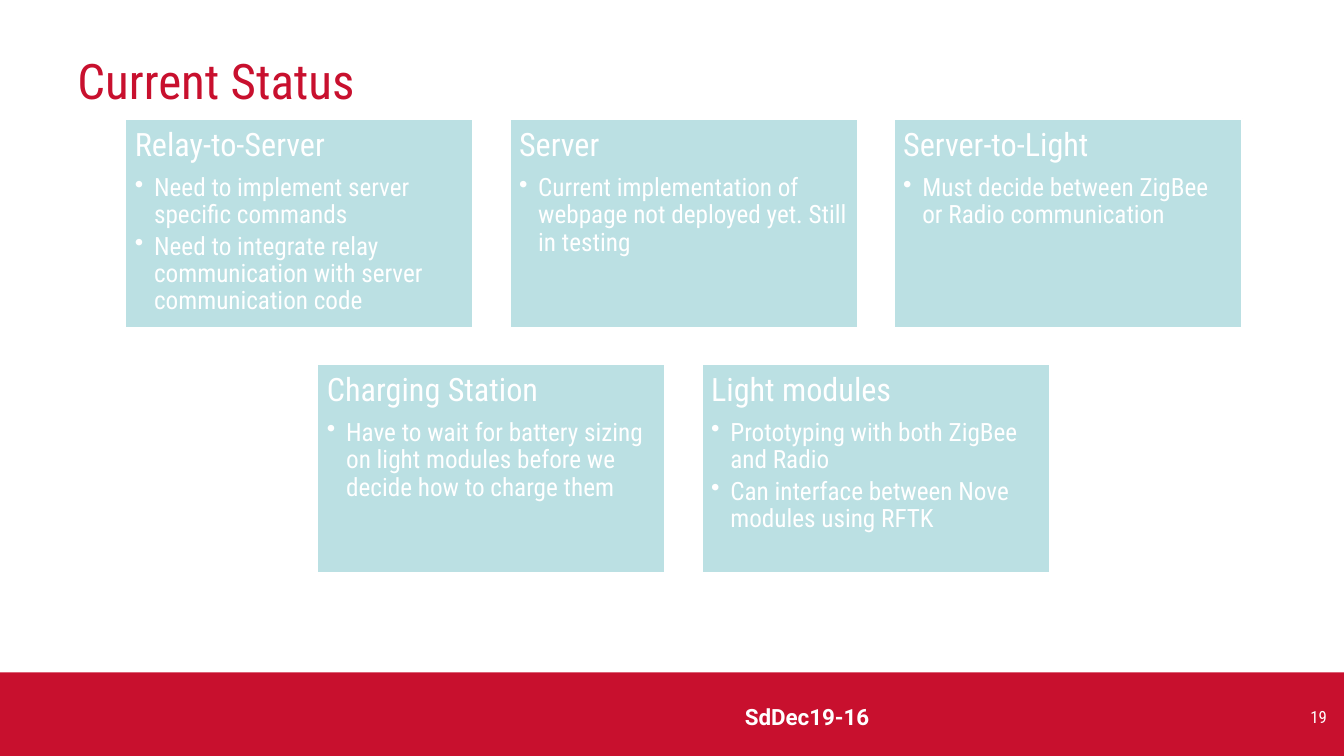
import dataclasses
import typing

import pptx
import pptx.dml.color
import pptx.enum.shapes
import pptx.enum.text
import pptx.oxml
import pptx.oxml.ns
import pptx.util

Inches = pptx.util.Inches
Pt = pptx.util.Pt
Align = pptx.enum.text.PP_ALIGN
Anchor = pptx.enum.text.MSO_ANCHOR


@dataclasses.dataclass(frozen=True)
class Theme:
    red: str = "C8102E"
    aqua: str = "BBE0E3"
    white: str = "FFFFFF"
    condensed: str = "Roboto Condensed"
    regular: str = "Roboto"
    title_size: float = 35
    heading_size: float = 23
    bullet_size: float = 18
    team_size: float = 16
    number_size: float = 12


@dataclasses.dataclass(frozen=True)
class Card:
    heading: str
    bullets: tuple[str, ...]


@dataclasses.dataclass(frozen=True)
class Label:
    text: str
    left: float
    top: float
    width: float
    height: float
    size: float
    color: str
    font: str
    align: Align
    bold: bool = False


THEME = Theme()
SLIDE_WIDTH, SLIDE_HEIGHT = 13.33, 7.5
BAR_HEIGHT = 0.83
CARD_WIDTH, CARD_HEIGHT = 3.46, 2.08
CARD_GAP = 0.35
GRID_CENTER, GRID_TOP = 6.78, 1.18
BULLET_INDENT = 0.19

CARD_ROWS = (
    (
        Card("Relay-to-Server", (
            "Need to implement server specific commands",
            "Need to integrate relay communication with server communication code",
        )),
        Card("Server", (
            "Current implementation of webpage not deployed yet. Still in testing",
        )),
        Card("Server-to-Light", ("Must decide between ZigBee or Radio communication",)),
    ),
    (
        Card("Charging Station", (
            "Have to wait for battery sizing on light modules before we decide how to charge them",
        )),
        Card("Light modules", (
            "Prototyping with both ZigBee and Radio",
            "Can interface between Nove modules using RFTK",
        )),
    ),
)

LABELS = (
    Label("Current Status", 0.67, 0.17, 11.33, 1.25, THEME.title_size,
          THEME.red, THEME.condensed, Align.LEFT),
    Label("SdDec19-16", 5.87, 6.91, 4.27, 0.4, THEME.team_size,
          THEME.white, THEME.regular, Align.CENTER, True),
    Label("19", 10.15, 6.91, 3.11, 0.4, THEME.number_size,
          THEME.white, THEME.condensed, Align.RIGHT),
)


def rgb(color: str) -> pptx.dml.color.RGBColor:
    return pptx.dml.color.RGBColor.from_string(color)


def style_para(para: typing.Any, size: float, color: str, font: str, bold: bool = False) -> None:
    for span in para.runs:
        span.font.size = Pt(size)
        span.font.name = font
        span.font.bold = bold
        span.font.color.rgb = rgb(color)


def add_bullet(para: typing.Any) -> None:
    properties = para._p.get_or_add_pPr()
    properties.set("marL", str(Inches(BULLET_INDENT)))
    properties.set("indent", str(-Inches(BULLET_INDENT)))
    bullet = pptx.oxml.parse_xml(f'<a:buChar {pptx.oxml.ns.nsdecls("a")} char="•"/>')
    properties.append(bullet)


def add_rectangle(page: typing.Any, left: float, top: float, width: float,
                  height: float, color: str) -> typing.Any:
    box = page.shapes.add_shape(
        pptx.enum.shapes.MSO_SHAPE.RECTANGLE,
        Inches(left), Inches(top), Inches(width), Inches(height))
    box.shadow.inherit = False
    box.fill.solid()
    box.fill.fore_color.rgb = rgb(color)
    box.line.fill.background()
    return box


def add_label(page: typing.Any, label: Label) -> None:
    box = page.shapes.add_textbox(
        Inches(label.left), Inches(label.top), Inches(label.width), Inches(label.height))
    frame = box.text_frame
    frame.word_wrap = True
    frame.vertical_anchor = Anchor.MIDDLE
    frame.text = label.text
    para = frame.paragraphs[0]
    para.alignment = label.align
    style_para(para, label.size, label.color, label.font, label.bold)


def add_card(page: typing.Any, card: Card, left: float, top: float) -> None:
    box = add_rectangle(page, left, top, CARD_WIDTH, CARD_HEIGHT, THEME.aqua)
    box.line.color.rgb = rgb(THEME.white)
    box.line.width = Pt(2)
    frame = box.text_frame
    frame.word_wrap = True
    frame.vertical_anchor = Anchor.TOP
    frame.margin_left = frame.margin_right = Inches(0.1)
    frame.margin_top = frame.margin_bottom = Inches(0.1)
    frame.text = "\n".join((card.heading, *card.bullets))
    for index, para in enumerate(frame.paragraphs):
        para.alignment = Align.LEFT
        para.line_spacing = 0.9
        para.space_after = Pt(3 if index else 8)
        if index:
            para.level = 1
            add_bullet(para)
        size = THEME.bullet_size if index else THEME.heading_size
        style_para(para, size, THEME.white, THEME.condensed)


def add_card_row(page: typing.Any, cards: tuple[Card, ...], top: float) -> None:
    pitch = CARD_WIDTH + CARD_GAP
    row_left = GRID_CENTER - (len(cards) * pitch - CARD_GAP) / 2
    for column, card in enumerate(cards):
        add_card(page, card, row_left + column * pitch, top)


def main() -> None:
    """Build the project status slide and save it."""
    deck = pptx.Presentation()
    deck.slide_width = Inches(SLIDE_WIDTH)
    deck.slide_height = Inches(SLIDE_HEIGHT)
    page = deck.slides.add_slide(deck.slide_layouts[6])
    add_rectangle(page, 0, SLIDE_HEIGHT - BAR_HEIGHT, SLIDE_WIDTH, BAR_HEIGHT, THEME.red)
    for row, cards in enumerate(CARD_ROWS):
        add_card_row(page, cards, GRID_TOP + row * (CARD_HEIGHT + CARD_GAP))
    for label in LABELS:
        add_label(page, label)
    deck.save("out.pptx")


if __name__ == "__main__":
    main()
